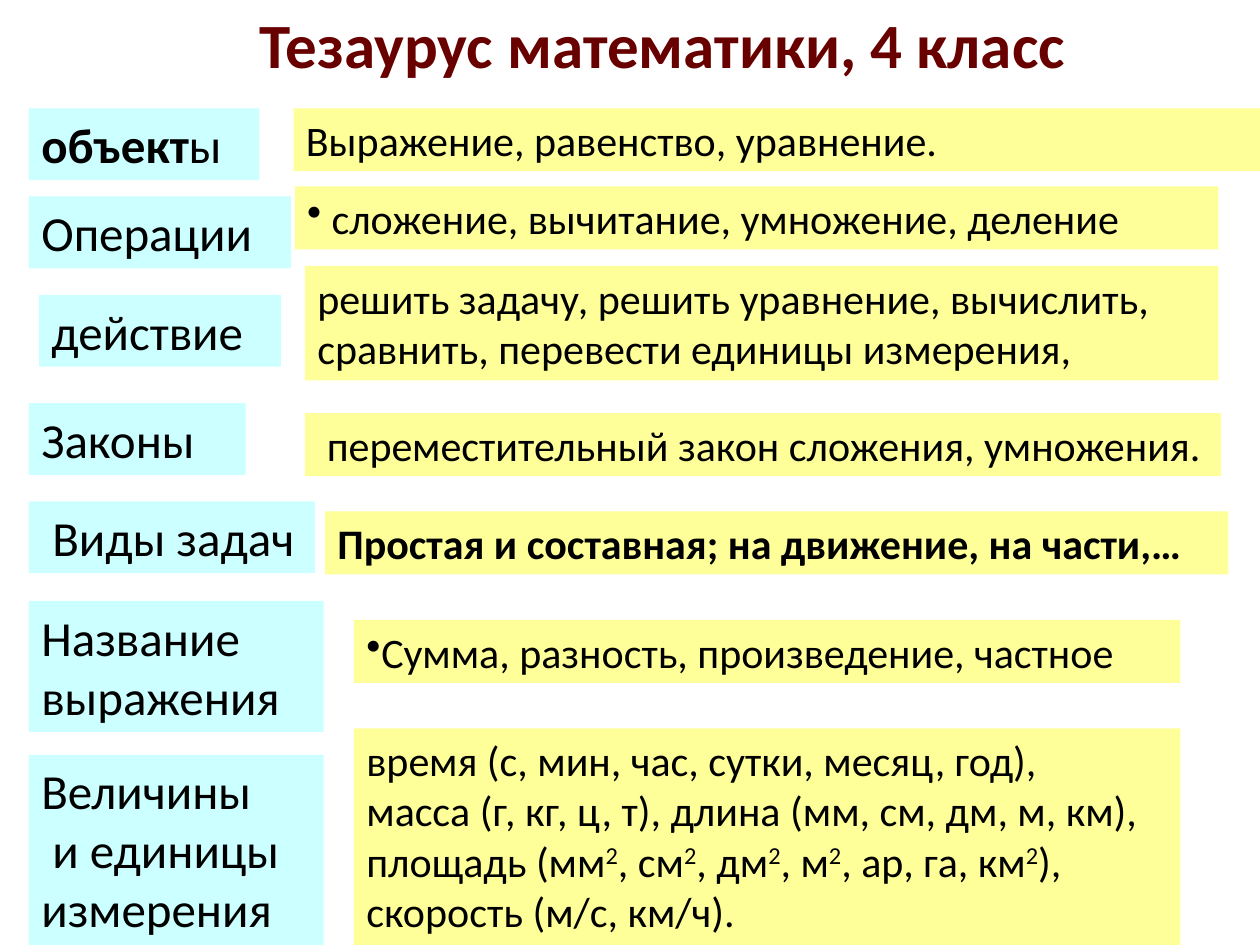
from lxml import etree
from pptx import Presentation
from pptx import util as u
from pptx.dml.color import RGBColor
from pptx.enum import shapes, text
from pptx.oxml import ns

CYAN = RGBColor(0xCC, 0xFF, 0xFF)
YELLOW = RGBColor(0xFF, 0xFF, 0x99)
BLACK = RGBColor(0, 0, 0)
MAROON = RGBColor(0x68, 0, 0)
COLS, ROWS = 100, 75
LEFT = 2.3
BOLD = {"bold": True}


class Thesaurus:
    """Holds the style and the current slide; places text on a 100 by 75 grid."""

    def __init__(self, prs):
        self.font = {"name": "Calibri", "bold": False}
        self.s = prs.slides.add_slide(prs.slide_layouts[6])
        self.col = prs.slide_width / COLS
        self.row = prs.slide_height / ROWS

    def place(self, x, y, w, h):
        return [u.Emu(round(n * unit)) for n, unit in
                zip((x, y, w, h), (self.col, self.row) * 2)]

    def add_text(self, sp, paras, size, color=BLACK, align=text.PP_ALIGN.LEFT,
                 anchor=text.MSO_ANCHOR.TOP, fit=text.MSO_AUTO_SIZE.SHAPE_TO_FIT_TEXT,
                 bullet=False):
        tf = sp.text_frame
        for key, value in {"word_wrap": True, "vertical_anchor": anchor,
                           "auto_size": fit}.items():
            setattr(tf, key, value)
        for i, runs in enumerate(paras):
            p = tf.add_paragraph() if i else tf.paragraphs[0]
            p.alignment = align
            if bullet:
                pPr = p._p.get_or_add_pPr()
                etree.SubElement(pPr, ns.qn("a:buChar")).set("char", "•")
            for piece in [runs] if isinstance(runs, str) else runs:
                words, extra = (piece, {}) if isinstance(piece, str) else piece
                style = {**self.font, "size": u.Pt(size), **extra}
                self.add_runs(p, words, style, color)

    def add_runs(self, p, words, style, color):
        for i, part in enumerate(words.split("^")):
            r = p.add_run()
            r.text = part
            for key, value in style.items():
                setattr(r.font, key, value)
            r.font.color.rgb = color
            if i % 2:
                r._r.get_or_add_rPr().set("baseline", "30000")

    def title(self, x, y, w, h, words):
        sp = self.s.shapes.add_textbox(*self.place(x, y, w, h))
        self.add_text(sp, [[(words, BOLD)]], 36, MAROON, text.PP_ALIGN.CENTER,
                      text.MSO_ANCHOR.MIDDLE, text.MSO_AUTO_SIZE.NONE)

    def box(self, x, y, w, h, paras, fill, size, **style):
        sp = self.s.shapes.add_shape(shapes.MSO_SHAPE.RECTANGLE,
                                     *self.place(x, y, w, h))
        sp.shadow.inherit = False
        sp.fill.solid()
        sp.fill.fore_color.rgb = fill
        sp.line.fill.background()
        self.add_text(sp, paras, size, **style)

    def term(self, x, y, w, paras, h=5.7):
        self.box(x, y, w, h, paras, CYAN, 28)

    def meaning(self, x, y, w, paras, h=5, **style):
        self.box(x, y, w, h, paras, YELLOW, 24, **style)


def main():
    prs = Presentation()
    prs.slide_width, prs.slide_height = u.Inches(10), u.Inches(7.5)
    t = Thesaurus(prs)

    t.term(LEFT, 15.6, 20.8, ["Операции "])
    t.term(3.1, 23.4, 19.2, ["действие"])
    t.meaning(24.2, 21.1, 72.5, ["решить задачу, решить уравнение, вычислить, "
                                 "сравнить, перевести единицы измерения,"], 9.1)
    t.meaning(23.4, 14.8, 73.3, [" сложение, вычитание, умножение, деление"], bullet=True)
    t.meaning(24.2, 32.8, 72.7, [" переместительный закон сложения, умножения."])
    t.term(LEFT, 32, 17.2, ["Законы"])
    t.term(LEFT, 8.6, 18.3, [[("объект", BOLD), "ы"]])
    t.meaning(23.3, 8.6, 76.7, ["Выражение, равенство, уравнение."])
    t.title(9.4, 0, 85.2, 6.9, " Тезаурус математики, 4 класс")
    t.term(LEFT, 39.8, 22.7, [" Виды задач"])
    t.meaning(25.8, 40.6, 71.7, [[("Простая и составная; на движение, на части,…", BOLD)]],
              align=text.PP_ALIGN.JUSTIFY)
    t.term(LEFT, 47.7, 23.4, ["Название выражения"], 10.4)
    t.term(LEFT, 59.9, 23.4, ["Величины", " и единицы измерения"], 15.1)
    t.meaning(28.1, 49.2, 65.6, ["Сумма, разность, произведение, частное"], bullet=True)
    t.meaning(28.1, 57.8, 65.6, [
        "время (с, мин, час, сутки, месяц, год),",
        "масса (г, кг, ц, т), длина (мм, см, дм, м, км),",
        "площадь (мм^2^, см^2^, дм^2^, м^2^, ар, га, км^2^),",
        "скорость (м/c, км/ч).",
    ], 17.2)
    prs.save("out.pptx")


if __name__ == "__main__":
    main()
